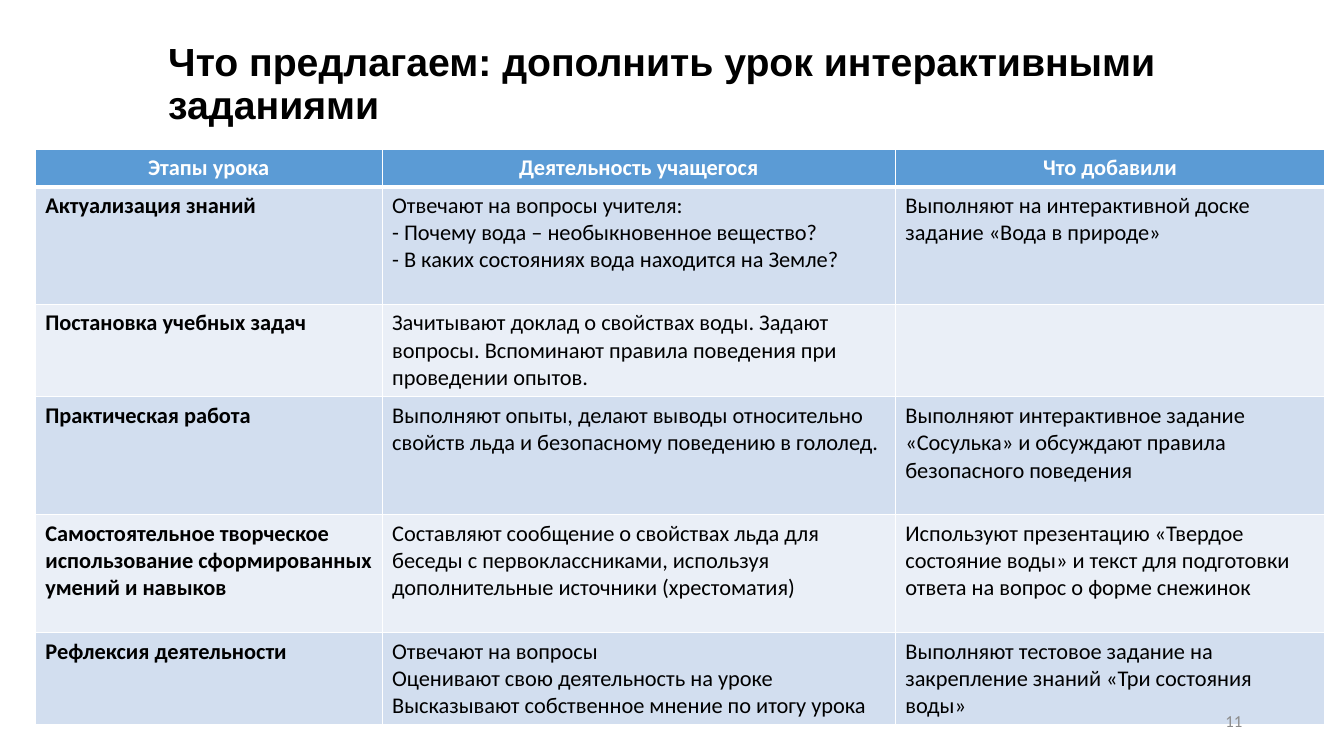
from pptx import Presentation
from pptx.dml.color import RGBColor
from pptx.enum.text import MSO_ANCHOR, PP_ALIGN
from pptx.oxml.ns import qn
from pptx.util import Inches, Pt
from lxml import etree

LEFT, CENTER, RIGHT = PP_ALIGN.LEFT, PP_ALIGN.CENTER, PP_ALIGN.RIGHT
MIDDLE = MSO_ANCHOR.MIDDLE

COLORS = {
    "header": "5B9BD5",
    "odd": "D2DEEF",
    "even": "EAEFF7",
    "white": "FFFFFF",
    "black": "000000",
    "number": "8C8C8C",
}

COL_WIDTHS = [3.44, 5.09, 4.26]
ROW_HEIGHTS = [0.36, 1.17, 0.9, 1.17, 1.17, 0.9]

LESSON_ROWS = [
    ["Этапы урока", "Деятельность учащегося", "Что добавили"],
    [
        "Актуализация знаний",
        "Отвечают на вопросы учителя:\n"
        "- Почему вода – необыкновенное вещество?\n"
        "- В каких состояниях вода находится на Земле?",
        "Выполняют на интерактивной доске задание «Вода в природе»",
    ],
    [
        "Постановка учебных задач",
        "Зачитывают доклад о свойствах воды. Задают вопросы. "
        "Вспоминают правила поведения при проведении опытов.",
        "",
    ],
    [
        "Практическая работа",
        "Выполняют опыты, делают выводы относительно свойств льда "
        "и безопасному поведению в гололед.",
        "Выполняют интерактивное задание «Сосулька» и обсуждают "
        "правила безопасного поведения",
    ],
    [
        "Самостоятельное творческое использование сформированных умений и навыков",
        "Составляют сообщение о свойствах льда для беседы с первоклассниками, "
        "используя дополнительные источники (хрестоматия)",
        "Используют презентацию «Твердое состояние воды» и текст "
        "для подготовки ответа на вопрос о форме снежинок",
    ],
    [
        "Рефлексия деятельности",
        "Отвечают на вопросы\n"
        "Оценивают свою деятельность на уроке\n"
        "Высказывают собственное мнение по итогу урока",
        "Выполняют тестовое задание на закрепление знаний «Три состояния воды»",
    ],
]


def rgb(name):
    return RGBColor.from_string(COLORS[name])


def write_text(tf, text, size=16, font="Calibri", color="black", bold=False,
               align=LEFT, spacing=None):
    tf.word_wrap = True
    tf.text = text
    for p in tf.paragraphs:
        p.alignment = align
        if spacing:
            p.line_spacing = spacing
        for r in p.runs:
            r.font.size = Pt(size)
            r.font.name = font
            r.font.bold = bold
            r.font.color.rgb = rgb(color)


def add_text_box(s, text, left, top, width, height, **fmt):
    sp = s.shapes.add_textbox(Inches(left), Inches(top), Inches(width), Inches(height))
    sp.text_frame.vertical_anchor = MIDDLE
    write_text(sp.text_frame, text, **fmt)


def set_borders(cell, bottom_width):
    tc_pr = cell._tc.get_or_add_tcPr()
    widths = {"a:lnL": 1, "a:lnR": 1, "a:lnT": 1, "a:lnB": bottom_width}
    for i, (tag, width) in enumerate(widths.items()):
        ln = etree.Element(qn(tag), w=str(Pt(width)))
        fill = etree.SubElement(ln, qn("a:solidFill"))
        etree.SubElement(fill, qn("a:srgbClr"), val=COLORS["white"])
        tc_pr.insert(i, ln)


def fill_cell(cell, text, row, col):
    header = row == 0
    band = "header" if header else "odd" if row % 2 else "even"
    cell.fill.solid()
    cell.fill.fore_color.rgb = rgb(band)
    write_text(cell.text_frame, text,
               color="white" if header else "black",
               bold=header or col == 0,
               align=CENTER if header else LEFT)
    set_borders(cell, 3 if header else 1)


def add_lesson_table(s, left, top):
    table = s.shapes.add_table(
        len(ROW_HEIGHTS), len(COL_WIDTHS), Inches(left), Inches(top),
        Inches(sum(COL_WIDTHS)), Inches(sum(ROW_HEIGHTS))).table
    for column, width in zip(table.columns, COL_WIDTHS):
        column.width = Inches(width)
    for row, height in zip(table.rows, ROW_HEIGHTS):
        row.height = Inches(height)
    for i, texts in enumerate(LESSON_ROWS):
        for j, text in enumerate(texts):
            fill_cell(table.cell(i, j), text, i, j)


def main():
    prs = Presentation()
    prs.slide_width, prs.slide_height = Inches(13.33), Inches(7.5)
    s = prs.slides.add_slide(prs.slide_layouts[6])
    add_lesson_table(s, 0.35, 1.48)
    add_text_box(s, "11", 9.42, 6.95, 3, 0.4, size=12, color="number", align=RIGHT)
    add_text_box(s, "Что предлагаем: дополнить урок интерактивными заданиями",
                 1.57, 0.33, 11.01, 1.03, size=28, font="Arial", bold=True, spacing=0.9)
    prs.save("out.pptx")


if __name__ == "__main__":
    main()
